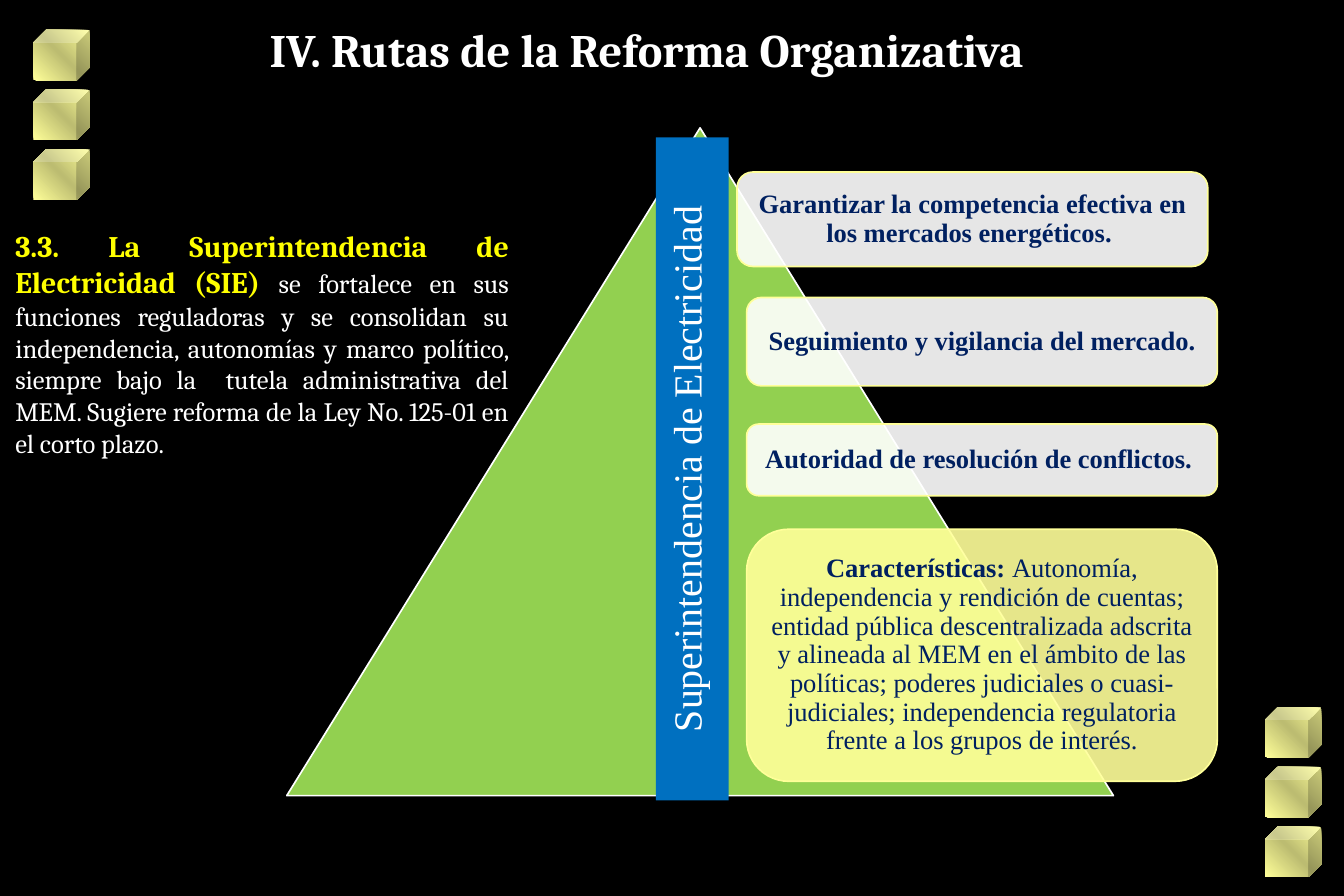
"""Builds the slide on the Superintendencia de Electricidad and its pyramid of duties."""
import copy
import pptx
import pptx.util
import pptx.dml.color
import pptx.enum.shapes
import pptx.enum.text
import pptx.oxml.ns
import lxml.etree

Inches, Pt = pptx.util.Inches, pptx.util.Pt
RGB = pptx.dml.color.RGBColor
KIND = pptx.enum.shapes.MSO_SHAPE
ALIGN = pptx.enum.text.PP_ALIGN
ANCHOR = pptx.enum.text.MSO_ANCHOR
qn = pptx.oxml.ns.qn

BLACK = RGB(0x00, 0x00, 0x00)
WHITE = RGB(0xFF, 0xFF, 0xFF)
CREAM = RGB(0xFF, 0xFF, 0x99)
OLIVE = RGB(0xBC, 0xBC, 0x71)
GREEN = RGB(0x92, 0xD0, 0x50)
BLUE = RGB(0x00, 0x70, 0xC0)
NAVY = RGB(0x00, 0x20, 0x60)
YELLOW = RGB(0xFF, 0xFF, 0x00)
SERIF, TIMES = "Cambria", "Times New Roman"

TITLE = [("IV. Rutas de la Reforma Organizativa", 28, WHITE, True)]
BODY = [
    ("3.3. La Superintendencia de Electricidad (SIE) ", 18, YELLOW, True),
    ("se fortalece en sus funciones reguladoras y se consolidan su independencia, "
     "autonomías y marco político, siempre bajo la  tutela administrativa del MEM. "
     "Sugiere reforma de la Ley No. 125-01 en el corto plazo. ", 16, WHITE, False),
]
PILLAR = [("Superintendencia de Electricidad", 24, WHITE, False)]
CARDS = [
    (6.17, 1.44, 0.79, WHITE,
     [("Garantizar la competencia efectiva en los mercados energéticos. ", 16, NAVY, True)]),
    (6.25, 2.49, 0.74, WHITE,
     [("Seguimiento y vigilancia del mercado.", 16, NAVY, True)]),
    (6.25, 3.55, 0.6, WHITE,
     [("Autoridad de resolución de conflictos. ", 16, NAVY, True)]),
    (6.25, 4.43, 2.11, CREAM,
     [("Características: ", 16, NAVY, True),
      ("Autonomía, independencia y rendición de cuentas; entidad pública "
       "descentralizada adscrita y alineada al MEM en el ámbito de las políticas; "
       "poderes judiciales o cuasi-judiciales; independencia regulatoria frente a "
       "los grupos de interés.", 16, NAVY, False)]),
]
CARD_WIDTH = 3.94
STACKS = [(0.28, 0.25), (10.59, 5.92)]
CUBE_STEP = 0.5


def write(frame, runs, font, align):
    frame.word_wrap = True
    para = frame.paragraphs[0]
    para.alignment = align
    para.font.name = font
    for text, size, color, bold in runs:
        run = para.add_run()
        run.text = text
        run.font.size = Pt(size)
        run.font.color.rgb = color
        run.font.bold = bold
    return para


def add_form(slide, kind, box, fill=None, line=None):
    form = slide.shapes.add_shape(kind, *map(Inches, box))
    form.shadow.inherit = False
    if fill is not None:
        form.fill.solid()
        form.fill.fore_color.rgb = fill
    if line is None:
        form.line.fill.background()
    else:
        form.line.color.rgb = line
        form.line.width = Pt(1)
    return form


def add_cube(slide, left, top):
    cube = add_form(slide, KIND.CUBE, (left, top, 0.47, 0.42))
    cube.fill.gradient()
    cube.fill.gradient_angle = 45
    stops = cube._element.spPr.find(qn("a:gradFill")).find(qn("a:gsLst"))
    stops.insert(1, copy.deepcopy(stops[0]))
    for stop, place, color in zip(cube.fill.gradient_stops, (0, 0.5, 1), (CREAM, OLIVE, CREAM)):
        stop.position = place
        stop.color.rgb = color


def add_card(slide, left, top, height, fill, runs):
    card = add_form(slide, KIND.ROUNDED_RECTANGLE, (left, top, CARD_WIDTH, height), fill, CREAM)
    tint = card._element.spPr.find(qn("a:solidFill"))[0]
    lxml.etree.SubElement(tint, qn("a:alpha")).set("val", "90000")
    frame = card.text_frame
    frame.margin_left = frame.margin_right = Inches(0.07)
    frame.margin_top = frame.margin_bottom = Inches(0.07)
    frame.vertical_anchor = ANCHOR.MIDDLE
    write(frame, runs, TIMES, ALIGN.CENTER).line_spacing = 0.9


def add_text(slide, box, runs, align):
    frame = slide.shapes.add_textbox(*map(Inches, box)).text_frame
    write(frame, runs, SERIF, align)


def main():
    deck = pptx.Presentation()
    deck.slide_width, deck.slide_height = Inches(11.25), Inches(7.5)
    slide = deck.slides.add_slide(deck.slide_layouts[6])
    slide.background.fill.solid()
    slide.background.fill.fore_color.rgb = BLACK

    for left, top in STACKS:
        for row in range(3):
            add_cube(slide, left, top + row * CUBE_STEP)
    add_form(slide, KIND.ISOSCELES_TRIANGLE, (2.4, 1.07, 6.92, 5.59), GREEN, WHITE)
    for card in CARDS:
        add_card(slide, *card)

    add_text(slide, (2.16, 0.13, 8.54, 0.57), TITLE, ALIGN.LEFT)
    pillar = add_form(slide, KIND.RECTANGLE, (5.49, 1.15, 0.61, 5.55), BLUE)
    frame = pillar.text_frame
    frame.vertical_anchor = ANCHOR.TOP
    write(frame, PILLAR, TIMES, ALIGN.CENTER)
    frame._txBody.bodyPr.set("vert", "vert270")
    add_text(slide, (0.03, 1.86, 4.33, 2.05), BODY, ALIGN.JUSTIFY)

    deck.save("out.pptx")


if __name__ == "__main__":
    main()
